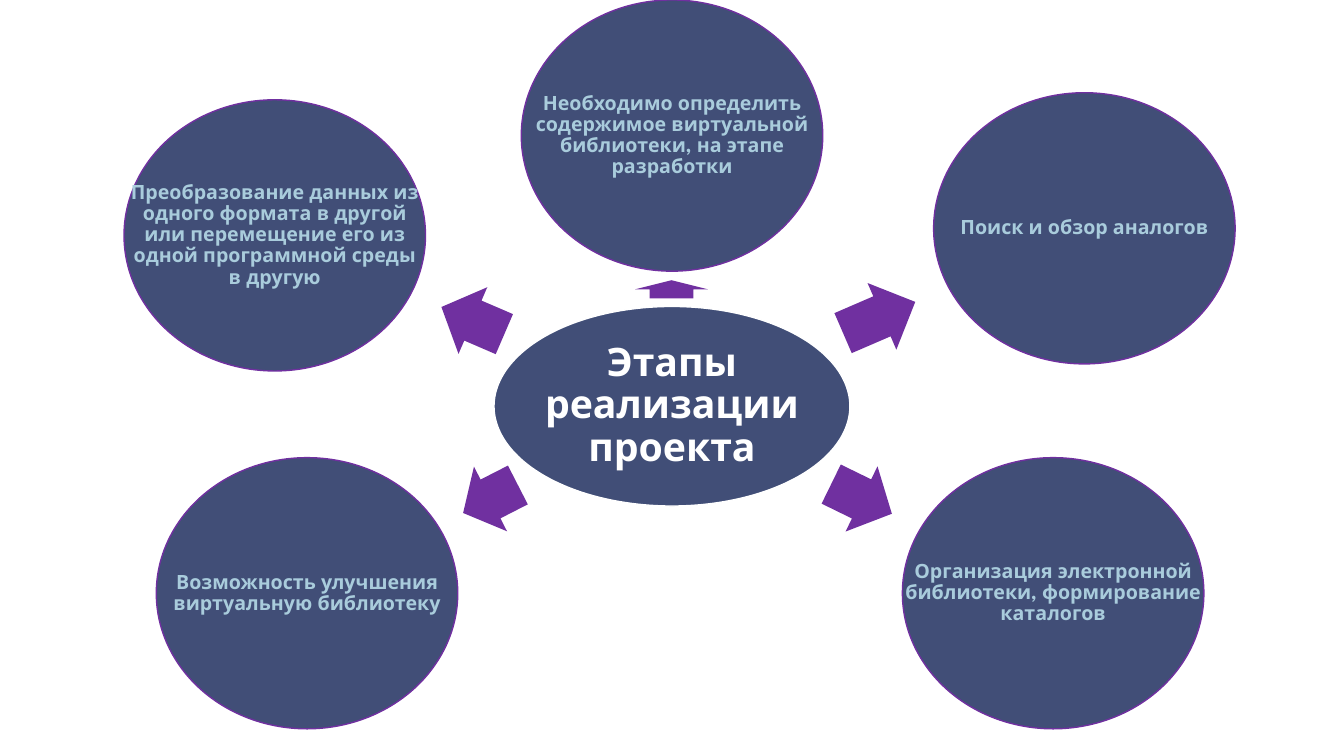
from dataclasses import dataclass

from pptx import Presentation
from pptx.dml.color import RGBColor
from pptx.enum.shapes import MSO_SHAPE
from pptx.enum.text import MSO_ANCHOR, PP_ALIGN
from pptx.util import Inches, Pt

OVAL = MSO_SHAPE.OVAL
RIGHT_ARROW = MSO_SHAPE.RIGHT_ARROW
MIDDLE = MSO_ANCHOR.MIDDLE
CENTER = PP_ALIGN.CENTER


@dataclass(frozen=True)
class Theme:
    font: str = "League Spartan"
    navy: str = "414E77"
    purple: str = "7030A0"
    white: str = "FFFFFF"
    pale_blue: str = "A9CCDC"
    hub_size: int = 28
    stage_size: int = 14
    outline: float = 1


HUB_BOX = (4.9, 3.04, 3.53, 1.98)
STAGE_WIDTH, STAGE_HEIGHT = 2.99, 2.69
ARROW_HEIGHT = 0.72

# Stage text, circle left and top, then arrow left, top, length and rotation
STAGES = [
    ("Необходимо определить содержимое виртуальной библиотеки, на этапе разработки",
     (5.17, 0), (6.57, 2.51, 0.18, 270)),
    ("Поиск и обзор аналогов",
     (9.26, 0.92), (8.33, 2.79, 0.78, 336.6)),
    ("Организация электронной библиотеки, формирование каталогов",
     (8.95, 4.54), (8.21, 4.59, 0.67, 26.1)),
    ("Возможность улучшения виртуальную библиотеку",
     (1.55, 4.54), (4.56, 4.59, 0.61, 152.9)),
    ("Преобразование данных из одного формата в другой или перемещение его из "
     "одной программной среды в другую",
     (1.23, 0.99), (4.35, 2.82, 0.68, 203.3)),
]


def write_text(frame, text, *, font, size, color, bold=True, line_spacing=0.9):
    paragraph = frame.paragraphs[0]
    paragraph.alignment = CENTER
    paragraph.line_spacing = line_spacing
    run = paragraph.add_run()
    run.text = text
    run.font.name = font
    run.font.size = Pt(size)
    run.font.bold = bold
    run.font.color.rgb = RGBColor.from_string(color)


class StageDiagram:
    def __init__(self, slide, theme):
        self.slide = slide
        self.theme = theme

    def preset(self, kind, box, fill):
        shape = self.slide.shapes.add_shape(kind, *map(Inches, box))
        shape.shadow.inherit = False
        shape.fill.solid()
        shape.fill.fore_color.rgb = RGBColor.from_string(fill)
        return shape

    def ellipse(self, box, outline):
        ellipse = self.preset(OVAL, box, self.theme.navy)
        ellipse.line.color.rgb = RGBColor.from_string(outline)
        ellipse.line.width = Pt(self.theme.outline)

    def label(self, box, text, size, color, inset):
        """Centre text over the full box, wider than an ellipse's own text area."""
        frame = self.slide.shapes.add_textbox(*map(Inches, box)).text_frame
        frame.word_wrap = True
        frame.vertical_anchor = MIDDLE
        frame.margin_left = frame.margin_right = Inches(inset)
        frame.margin_top = frame.margin_bottom = Inches(inset)
        write_text(frame, text, font=self.theme.font, size=size, color=color)

    def arrow(self, left, top, length, rotation):
        arrow = self.preset(RIGHT_ARROW, (left, top, length, ARROW_HEIGHT),
                            self.theme.purple)
        arrow.line.fill.background()
        arrow.adjustments[0] = 0.6
        arrow.adjustments[1] = 0.5
        arrow.rotation = rotation

    def hub(self, text):
        self.ellipse(HUB_BOX, self.theme.white)
        self.label(HUB_BOX, text, self.theme.hub_size, self.theme.white, 0.04)

    def stage(self, text, position):
        box = (*position, STAGE_WIDTH, STAGE_HEIGHT)
        self.ellipse(box, self.theme.purple)
        self.label(box, text, self.theme.stage_size, self.theme.pale_blue, 0.02)


def main():
    presentation = Presentation()
    presentation.slide_width = Inches(13.33)
    presentation.slide_height = Inches(7.5)
    slide = presentation.slides.add_slide(presentation.slide_layouts[6])

    diagram = StageDiagram(slide, Theme())
    diagram.hub("Этапы реализации проекта")
    for text, position, arrow in STAGES:
        diagram.arrow(*arrow)
        diagram.stage(text, position)

    presentation.save("out.pptx")


if __name__ == "__main__":
    main()
